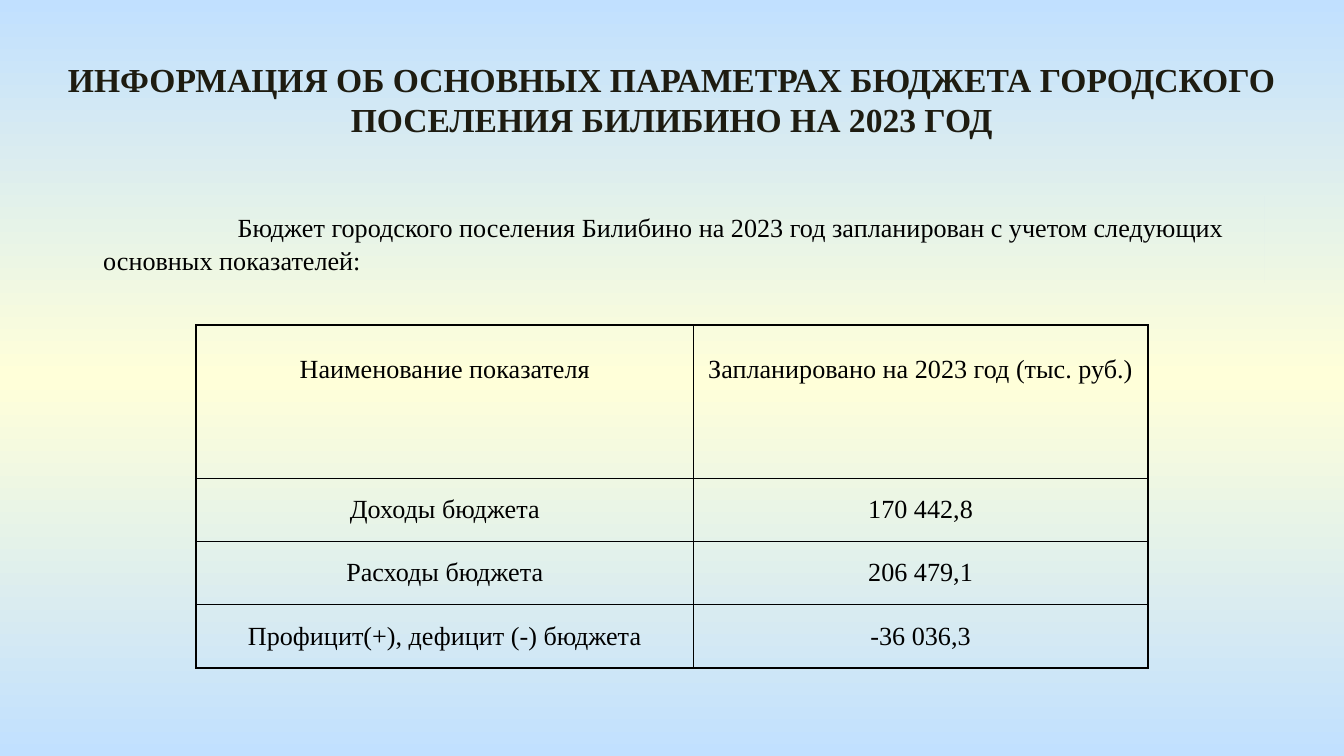
from typing import NamedTuple

from lxml.etree import SubElement
from pptx import Presentation
from pptx.dml.color import RGBColor
from pptx.enum.text import MSO_ANCHOR, PP_ALIGN
from pptx.oxml.ns import qn
from pptx.util import Inches, Pt

COLORS = {"sky": "C1E0FF", "cream": "FFFFD9", "title": "1E1C11", "ink": "000000"}
FONT = "Times New Roman"


class Row(NamedTuple):
    name: str
    value: str
    height: float = 0.47
    top: float = 0
    anchor: MSO_ANCHOR = MSO_ANCHOR.MIDDLE


WIDTHS = (3.7, 3.38)
ROWS = [
    Row("Наименование показателя", "Запланировано на 2023 год (тыс. руб.)",
        1.14, 0.22, MSO_ANCHOR.TOP),
    Row("Доходы бюджета", "170 442,8"),
    Row("Расходы бюджета", "206 479,1"),
    Row("Профицит(+), дефицит (-) бюджета", "-36 036,3"),
]


def style(par, size: float, color: str = "ink", bold: bool = False,
          align: PP_ALIGN = PP_ALIGN.CENTER) -> None:
    par.alignment = align
    font = par.font
    font.name, font.size, font.bold = FONT, Pt(size), bold
    font.color.rgb = RGBColor.from_string(COLORS[color])


def add_text(slide, box: tuple, text: str):
    shape = slide.shapes.add_textbox(*map(Inches, box))
    shape.text_frame.word_wrap = True
    shape.text_frame.text = text
    return shape


def paint_back(slide) -> None:
    """Fill the background with a vertical gradient of three stops."""
    fill = slide.background.fill
    fill.gradient()
    fill.gradient_angle = 270
    stops = slide.element.find(".//" + qn("a:gsLst"))
    for stop in list(stops):
        stops.remove(stop)
    for pos, name in ((0, "sky"), (50, "cream"), (100, "sky")):
        stop = SubElement(stops, qn("a:gs"), pos=str(pos * 1000))
        SubElement(stop, qn("a:srgbClr"), val=COLORS[name])


def add_title(slide) -> None:
    shape = add_text(slide, (0.35, 0.39, 9.3, 0.71),
                     "ИНФОРМАЦИЯ ОБ ОСНОВНЫХ ПАРАМЕТРАХ БЮДЖЕТА ГОРОДСКОГО "
                     "ПОСЕЛЕНИЯ БИЛИБИНО НА 2023 ГОД")
    style(shape.text_frame.paragraphs[0], 18, "title", True)


def add_intro(slide) -> None:
    """Add the lead-in, filled with the slide's own background."""
    shape = add_text(slide, (0.67, 1.46, 8.74, 0.64),
                     "Бюджет городского поселения Билибино на 2023 год "
                     "запланирован с учетом следующих основных показателей:")
    props = shape.element.spPr
    props.remove(props.find(qn("a:noFill")))
    shape.element.set("useBgFill", "1")
    shape.text_frame.margin_top = Inches(0.1)
    par = shape.text_frame.paragraphs[0]
    style(par, 14, align=PP_ALIGN.LEFT)
    par.line_spacing = 1.05
    par._p.get_or_add_pPr().set("indent", str(Inches(1)))


def add_borders(cell) -> None:
    props = cell._tc.get_or_add_tcPr()
    for i, side in enumerate(("lnL", "lnR", "lnT", "lnB")):
        line = props.makeelement(qn("a:" + side), {"w": str(Pt(1))})
        fill = SubElement(line, qn("a:solidFill"))
        SubElement(fill, qn("a:srgbClr"), val=COLORS["ink"])
        props.insert(i, line)


def fill_cell(cell, text: str, row: Row) -> None:
    cell.text = text
    cell.fill.background()
    cell.vertical_anchor = row.anchor
    cell.margin_left = cell.margin_right = Inches(0.07)
    cell.margin_top, cell.margin_bottom = Inches(row.top), 0
    style(cell.text_frame.paragraphs[0], 14)
    add_borders(cell)


def add_grid(slide) -> None:
    height = sum(row.height for row in ROWS)
    box = map(Inches, (1.46, 2.42, sum(WIDTHS), height))
    table = slide.shapes.add_table(len(ROWS), len(WIDTHS), *box).table
    table.first_row = table.horz_banding = False
    for col, width in zip(table.columns, WIDTHS):
        col.width = Inches(width)
    for r, row in enumerate(ROWS):
        table.rows[r].height = Inches(row.height)
        for c, text in enumerate((row.name, row.value)):
            fill_cell(table.cell(r, c), text, row)


def main() -> None:
    deck = Presentation()
    deck.slide_width = Inches(10)
    deck.slide_height = Inches(10 * 9 / 16)
    slide = deck.slides.add_slide(deck.slide_layouts[6])
    paint_back(slide)
    add_intro(slide)
    add_title(slide)
    add_grid(slide)
    deck.save("out.pptx")


if __name__ == "__main__":
    main()
